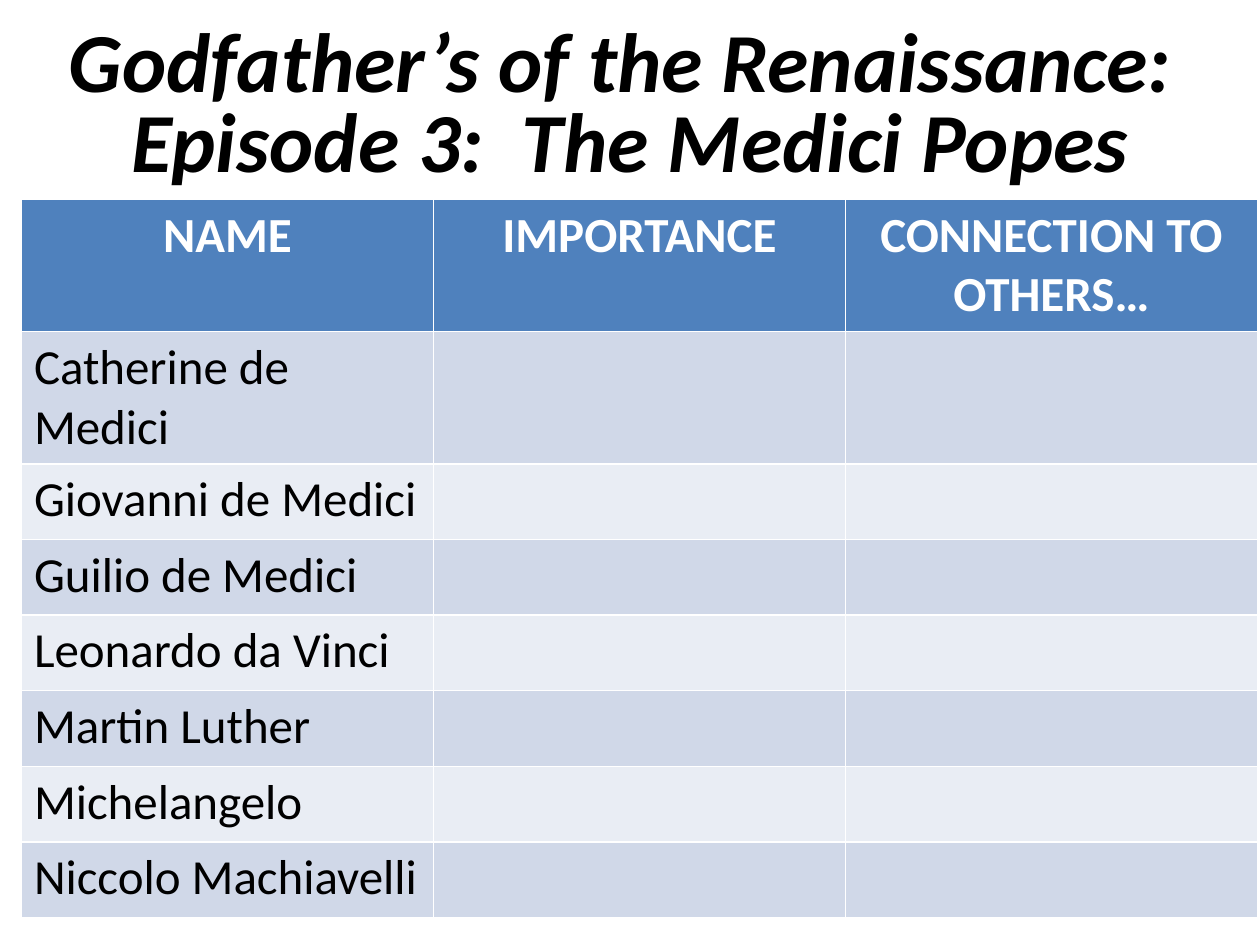
from pptx import Presentation
from pptx.dml.color import RGBColor
from pptx.enum.text import MSO_ANCHOR, MSO_AUTO_SIZE, PP_ALIGN
from pptx.util import Inches, Pt

BLACK = RGBColor(0x00, 0x00, 0x00)
WHITE = RGBColor(0xFF, 0xFF, 0xFF)
HEADER_BLUE = RGBColor(0x4F, 0x81, 0xBD)
BAND_DARK = RGBColor(0xD0, 0xD8, 0xE8)
BAND_LIGHT = RGBColor(0xE9, 0xED, 0xF4)
FONT = "Calibri"

HEADINGS = ["NAME", "IMPORTANCE", "CONNECTION TO OTHERS…"]
PEOPLE = [
    "Catherine de Medici",
    "Giovanni de Medici",
    "Guilio de Medici",
    "Leonardo da Vinci",
    "Martin Luther",
    "Michelangelo",
    "Niccolo Machiavelli",
]

deck = Presentation()
deck.slide_width = Inches(10)
deck.slide_height = Inches(7.5)
page = deck.slides.add_slide(deck.slide_layouts[5])

title = page.shapes.title
title.left, title.top = Inches(0), Inches(0.17)
title.width, title.height = Inches(10), Inches(1.5)
title_frame = title.text_frame
title_frame.text = "Godfather’s of the Renaissance:  Episode 3:  The Medici Popes"
title_frame.word_wrap = True
title_frame.auto_size = MSO_AUTO_SIZE.NONE
title_frame.vertical_anchor = MSO_ANCHOR.TOP
para = title_frame.paragraphs[0]
para.alignment = PP_ALIGN.CENTER
para.line_spacing = 0.8
para.space_before = Pt(9.6)
para.font.name = FONT
para.font.size = Pt(48)
para.font.bold = True
para.font.italic = True
para.font.color.rgb = BLACK

rows = [HEADINGS] + [[person, "", ""] for person in PEOPLE]
table = page.shapes.add_table(
    len(rows), len(HEADINGS), Inches(0.17), Inches(1.58), Inches(9.8), Inches(5.67)
).table
for column in table.columns:
    column.width = Inches(3.27)

for row_index, texts in enumerate(rows):
    is_header = row_index == 0
    table.rows[row_index].height = Inches(1.03 if row_index < 2 else 0.6)
    if is_header:
        fill_color = HEADER_BLUE
    else:
        fill_color = BAND_DARK if row_index % 2 else BAND_LIGHT
    for column_index, text in enumerate(texts):
        cell = table.cell(row_index, column_index)
        cell.fill.solid()
        cell.fill.fore_color.rgb = fill_color
        cell.text = text
        para = cell.text_frame.paragraphs[0]
        para.alignment = PP_ALIGN.CENTER if is_header else PP_ALIGN.LEFT
        para.font.name = FONT
        para.font.size = Pt(28)
        para.font.bold = is_header
        para.font.color.rgb = WHITE if is_header else BLACK

deck.save("out.pptx")
